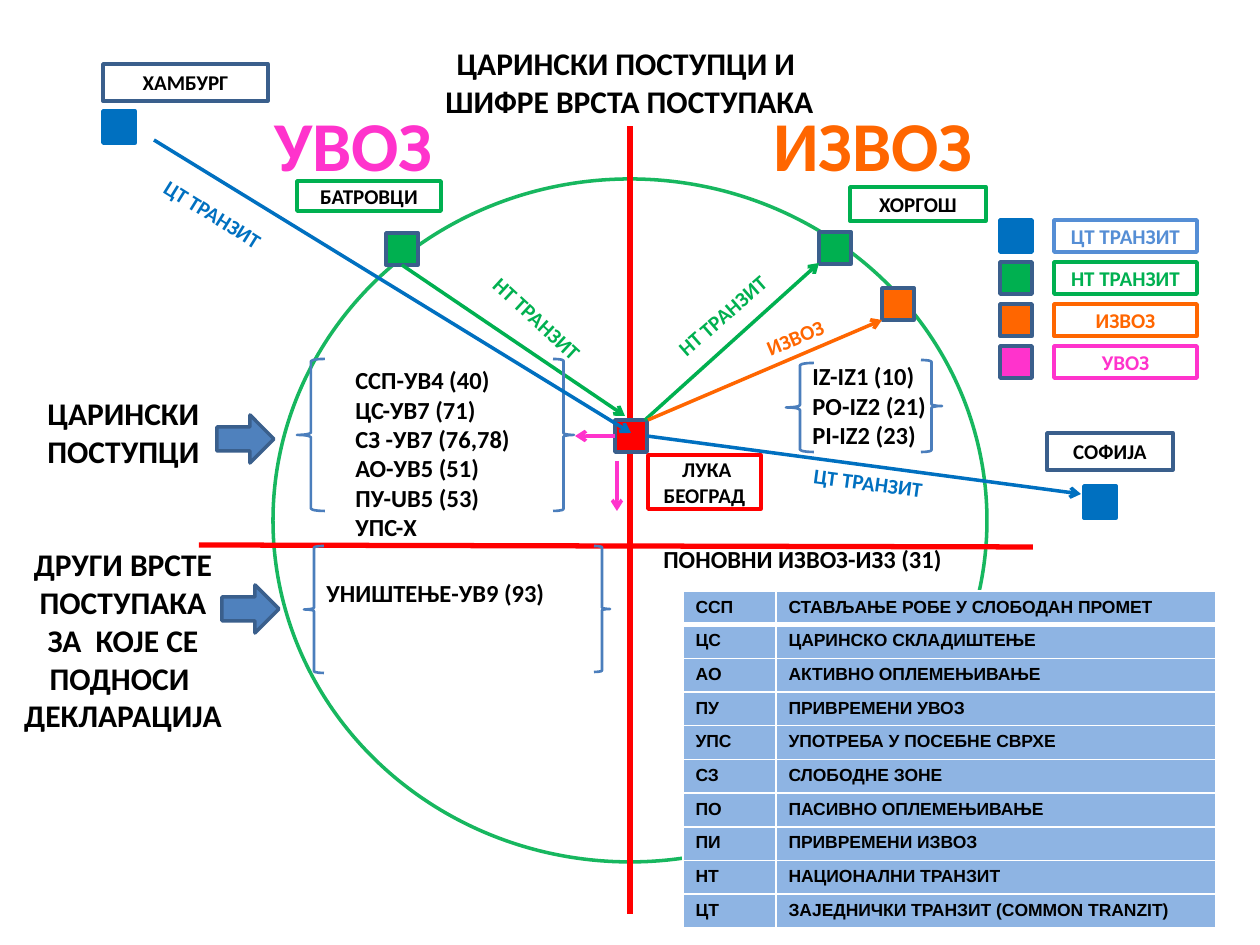
from dataclasses import dataclass

from lxml.etree import SubElement
from pptx import Presentation
from pptx.dml.color import RGBColor
from pptx.enum.shapes import MSO_CONNECTOR, MSO_SHAPE
from pptx.enum.text import MSO_ANCHOR, MSO_AUTO_SIZE, PP_ALIGN
from pptx.oxml.ns import qn
from pptx.slide import Slide
from pptx.util import Emu, Inches, Pt

SCALE = 914400 / 126
BLACK, WHITE, RED = "000000", "FFFFFF", "FF0000"
GREEN, ORANGE, PINK, BLUE = "00B050", "FF6600", "FF33CC", "0070C0"
STEEL, BRACE, ARROW, PALE, SKY = "3A5F8C", "4B7EBC", "4F81BD", "8EB4E3", "558ED5"
SIDE = 32

GLOSSARY = [
    ("ССП", "СТАВЉАЊЕ РОБЕ У СЛОБОДАН ПРОМЕТ"),
    ("ЦС", "ЦАРИНСКО СКЛАДИШТЕЊЕ"),
    ("AO", "АКТИВНО ОПЛЕМЕЊИВАЊЕ"),
    ("ПУ", "ПРИВРЕМЕНИ УВОЗ"),
    ("УПС", "УПОТРЕБА У ПОСЕБНЕ СВРХЕ"),
    ("СЗ", "СЛОБОДНЕ ЗОНЕ"),
    ("ПО", "ПАСИВНО ОПЛЕМЕЊИВАЊЕ"),
    ("ПИ", "ПРИВРЕМЕНИ ИЗВОЗ"),
    ("НТ", "НАЦИОНАЛНИ ТРАНЗИТ"),
    ("ЦТ", "ЗАЈЕДНИЧКИ ТРАНЗИТ (COMMON TRANZIT)"),
]


def px(length):
    return Emu(round(length * SCALE))


def color(code):
    return RGBColor.from_string(code)


def apply(target, formats):
    for name, value in formats.items():
        setattr(target, name, value)


def write(frame, words, size, ink, align=None, face="Calibri"):
    frame.text = words
    for paragraph in frame.paragraphs:
        paragraph.alignment = align
        for run in paragraph.runs:
            apply(run.font, {"name": face, "size": Pt(size), "bold": True})
            run.font.color.rgb = color(ink)


@dataclass
class Region:
    slide: Slide
    left: int
    top: int

    def box(self, x, y, width, height):
        return px(self.left + x), px(self.top + y), px(width), px(height)

    def outline(self, kind, x, y, width, height, edge, fill=None, weight=2):
        shape = self.slide.shapes.add_shape(kind, *self.box(x, y, width, height))
        shape.shadow.inherit = False
        if fill:
            shape.fill.solid()
            shape.fill.fore_color.rgb = color(fill)
        else:
            shape.fill.background()
        shape.line.color.rgb = color(edge)
        shape.line.width = Pt(weight)
        return shape

    def marker(self, x, y, fill, edge=STEEL):
        return self.outline(MSO_SHAPE.RECTANGLE, x, y, SIDE, SIDE, edge, fill)

    def label(self, x, y, width, height, words, edge, ink=BLACK):
        sign = self.outline(MSO_SHAPE.RECTANGLE, x, y, width, height, edge)
        apply(sign.text_frame, {"word_wrap": True, "vertical_anchor": MSO_ANCHOR.MIDDLE})
        write(sign.text_frame, words, 12, ink, PP_ALIGN.CENTER)

    def text(self, x, y, width, height, words, size, ink=BLACK, align=None, wrap=True):
        caption = self.slide.shapes.add_textbox(*self.box(x, y, width, height))
        write(caption.text_frame, words, size, ink, align)
        apply(caption.text_frame, {"word_wrap": wrap, "auto_size": MSO_AUTO_SIZE.SHAPE_TO_FIT_TEXT})

    def route_name(self, x, y, width, height, words, ink, angle):
        name = self.slide.shapes.add_textbox(*self.box(x, y, width, height))
        name.rotation = angle
        apply(name.text_frame, {"word_wrap": True, "vertical_anchor": MSO_ANCHOR.MIDDLE})
        write(name.text_frame, words, 12, ink, PP_ALIGN.CENTER)

    def braces(self, left_brace, right_brace):
        for kind, place in ((MSO_SHAPE.LEFT_BRACE, left_brace), (MSO_SHAPE.RIGHT_BRACE, right_brace)):
            self.outline(kind, *place, BRACE, weight=1.5)

    def route(self, start, end, ink, weight=2, arrow=True, origin=None):
        ends = [px(self.left + start[0]), px(self.top + start[1]),
                px(self.left + end[0]), px(self.top + end[1])]
        path = self.slide.shapes.add_connector(MSO_CONNECTOR.STRAIGHT, *ends)
        if origin:
            path.begin_connect(*origin)
        path.line.color.rgb = color(ink)
        path.line.width = Pt(weight)
        properties = path.element.spPr
        if arrow:
            SubElement(properties.find(qn("a:ln")), qn("a:tailEnd"), type="arrow")
        SubElement(properties, qn("a:effectLst"))


def draw_border(region):
    circle = region.outline(MSO_SHAPE.OVAL, 74, 53, 714, 683, GREEN)
    ink = circle.element.spPr.find(qn("a:ln")).find(".//" + qn("a:srgbClr"))
    SubElement(ink, qn("a:alpha"), val="91000")
    region.route((431, 0), (431, 788), RED, 3, False)
    region.route((0, 419), (834, 421), RED, 3, False)


def draw_port(region):
    port = region.marker(0, 0, RED)
    region.label(33, 35, 113, 54, " ЛУКА БЕОГРАД", RED)
    return port


def draw_titles(region):
    region.text(169, 0, 397, 90, "ЦАРИНСКИ ПОСТУПЦИ И \nШИФРЕ ВРСТА ПОСТУПАКА", 18,
                align=PP_ALIGN.CENTER, wrap=False)
    region.text(0, 57, 185, 97, "УВОЗ", 40, PINK, wrap=False)
    region.text(499, 57, 227, 97, "ИЗВОЗ", 40, ORANGE, wrap=False)


def draw_import(region, port):
    crossing = region.marker(89, 52, GREEN)
    region.label(0, 0, 144, 30, "БАТРОВЦИ", GREEN)
    region.route((105, 84), (328, 235), GREEN, origin=(crossing, 2))
    region.route_name(172, 106, 136, 63, "НТ ТРАНЗИТ", GREEN, 42.6)
    region.braces((0, 178, 28, 152), (256, 178, 21, 152))
    region.text(46, 178, 208, 190,
                "ССП-УВ4 (40)\nЦС-УВ7 (71)\nСЗ -УВ7 (76,78)\nАО-УВ5 (51)\nПУ-UВ5 (53)\nУПС-X", 14)
    region.route((318, 255), (278, 255), PINK, origin=(port, 1))
    region.route((320, 280), (320, 330), PINK)


def draw_export(region):
    region.marker(172, 45, GREEN)
    region.marker(235, 101, ORANGE)
    region.label(203, 0, 136, 34, "ХОРГОШ", GREEN)
    region.route((-2, 233), (172, 76), GREEN)
    region.route((1, 233), (235, 133), ORANGE)
    region.route_name(7, 97, 136, 63, "НТ ТРАНЗИТ", GREEN, -41.2)
    region.route_name(80, 119, 136, 63, "ИЗВОЗ", ORANGE, -22.7)
    region.text(153, 168, 158, 102, "IZ-IZ1 (10)\nPO-IZ2 (21)\nPI-IZ2 (23)", 14)
    region.braces((139, 176, 28, 89), (274, 173, 21, 92))


def draw_procedures(region):
    region.text(35, 0, 209, 90, "ЦАРИНСКИ\nПОСТУПЦИ", 18)
    region.text(0, 151, 246, 204,
                "ДРУГИ ВРСТЕ\nПОСТУПАКА\n ЗА  КОЈЕ СЕ \nПОДНОСИ \nДЕКЛАРАЦИЈА", 18,
                align=PP_ALIGN.CENTER)
    for x, y in ((217, 27), (222, 197)):
        region.outline(MSO_SHAPE.RIGHT_ARROW, x, y, 57, 48, STEEL, ARROW)


def draw_other_codes(region):
    region.text(10, 26, 267, 43, "УНИШТЕЊЕ-УВ9 (93)", 14)
    region.text(347, -8, 325, 43, "ПОНОВНИ ИЗВОЗ-ИЗ3 (31)", 14)
    region.braces((0, 0, 20, 127), (290, 0, 16, 126))


def draw_transit(region, port):
    region.marker(0, 47, BLUE, BLUE)
    region.label(0, 0, 165, 37, "ХАМБУРГ", STEEL)
    region.route((51, 76), (528, 369), BLUE)
    region.route_name(42, 129, 140, 44, "ЦТ ТРАНЗИТ ", BLUE, 31.9)
    region.route((542, 372), (978, 430), BLUE, origin=(port, 3))
    region.marker(981, 422, BLUE, BLUE)
    region.label(944, 369, 126, 37, "СОФИЈА", STEEL)
    region.route_name(690, 397, 155, 44, "ЦТ ТРАНЗИТ ", BLUE, 7.6)


def draw_legend(region):
    entries = [
        ("ЦТ ТРАНЗИТ", BLUE, BLUE, SKY),
        ("НТ ТРАНЗИТ", GREEN, STEEL, GREEN),
        ("ИЗВОЗ", ORANGE, STEEL, ORANGE),
        ("УВОЗ", PINK, STEEL, PINK),
    ]
    for row, (meaning, fill, edge, ink) in enumerate(entries):
        region.marker(0, 42 * row, fill, edge)
        region.label(54, 42 * row, 143, SIDE, meaning, ink, ink)


def draw_glossary(region, width, height):
    place = region.box(0, 0, width, height)
    glossary = region.slide.shapes.add_table(len(GLOSSARY), 2, *place).table
    for column, span in zip(glossary.columns, (93, width - 93)):
        column.width = px(span)
    for index, entry in enumerate(GLOSSARY):
        glossary.rows[index].height = px(height / len(GLOSSARY))
        for cell, words in zip(glossary.rows[index].cells, entry):
            write(cell.text_frame, words, 10, BLACK, face="Arial")
            properties = cell._tc.get_or_add_tcPr()
            for edge in ("L", "R", "T", "B"):
                heavy = (index, edge) in ((0, "B"), (1, "T"))
                border = SubElement(properties, qn(f"a:ln{edge}"), w=str(Pt(3 if heavy else 1)))
                SubElement(SubElement(border, qn("a:solidFill")), qn("a:srgbClr"), val=WHITE)
            cell.fill.solid()
            cell.fill.fore_color.rgb = color(PALE)


def main():
    deck = Presentation()
    apply(deck, {"slide_width": Inches(10), "slide_height": Inches(7.5)})
    slide = deck.slides.add_slide(deck.slide_layouts[6])
    draw_border(Region(slide, 199, 126))
    port = draw_port(Region(slide, 615, 420))
    draw_titles(Region(slide, 262, 38))
    draw_import(Region(slide, 297, 181), port)
    draw_export(Region(slide, 647, 187))
    draw_procedures(Region(slide, 0, 388))
    draw_other_codes(Region(slide, 304, 546))
    draw_glossary(Region(slide, 683, 591), 533, 336)
    draw_transit(Region(slide, 103, 64), port)
    draw_legend(Region(slide, 1000, 220))
    deck.save("out.pptx")


if __name__ == "__main__":
    main()
